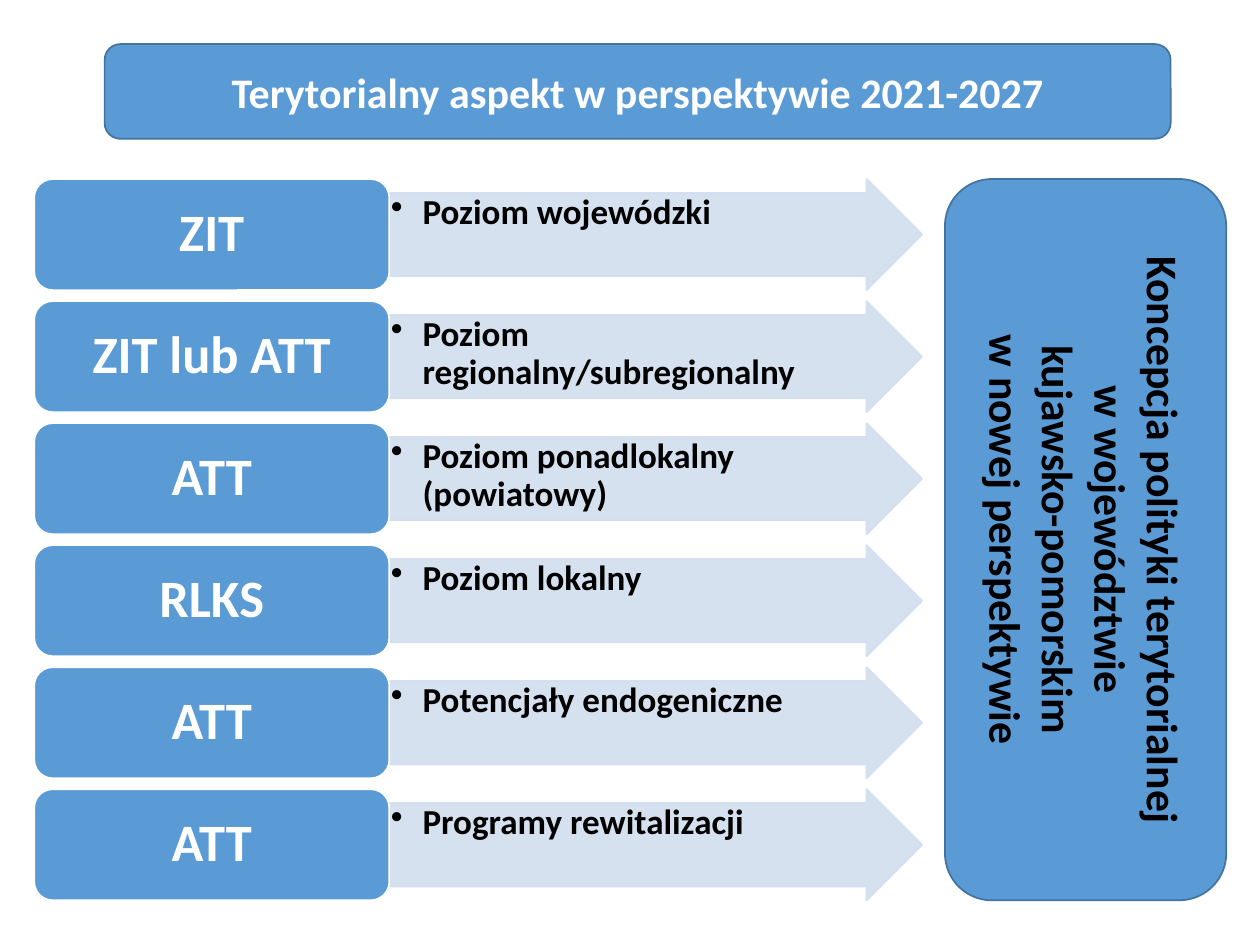
from lxml.etree import SubElement
from pptx import Presentation
from pptx.dml.color import RGBColor
from pptx.enum.shapes import MSO_SHAPE
from pptx.enum.text import MSO_ANCHOR, PP_ALIGN
from pptx.oxml.ns import qn
from pptx.util import Cm, Pt

TITLE = "Terytorialny aspekt w perspektywie 2021-2027"
LEVELS = [
    ("ZIT", "Poziom wojewódzki"),
    ("ZIT lub ATT", "Poziom regionalny/subregionalny"),
    ("ATT", "Poziom ponadlokalny (powiatowy)"),
    ("RLKS", "Poziom lokalny"),
    ("ATT", "Potencjały endogeniczne"),
    ("ATT", "Programy rewitalizacji"),
]
CONCEPT_LINES = [
    "Koncepcja polityki terytorialnej",
    "w województwie",
    "kujawsko-pomorskim",
    "w nowej perspektywie",
]

BLUE = RGBColor(0x5B, 0x9B, 0xD5)
DARK_BLUE = RGBColor(0x43, 0x73, 0x9E)
PALE_BLUE = RGBColor(0xD2, 0xDE, 0xEF)
WHITE = RGBColor(0xFF, 0xFF, 0xFF)
BLACK = RGBColor(0x00, 0x00, 0x00)

# Centimetres
ROWS_TOP, ROW_PITCH, ROW_HEIGHT = 3.61, 2.46, 2.24
LABEL_LEFT, LABEL_WIDTH = 0.69, 7.16
ARROW_LEFT, ARROW_WIDTH = LABEL_LEFT + LABEL_WIDTH, 10.74
CONCEPT_HEIGHT = ROW_PITCH * (len(LEVELS) - 1) + ROW_HEIGHT


def add_block(slide, preset, box, fill, outline):
    block = slide.shapes.add_shape(preset, *(Cm(length) for length in box))
    block.shadow.inherit = False
    block.fill.solid()
    block.fill.fore_color.rgb = fill
    block.line.color.rgb = outline
    block.line.width = Pt(1)
    return block


def write(block, text, size, color=WHITE, align=PP_ALIGN.CENTER,
          anchor=MSO_ANCHOR.MIDDLE, insets=(0.25, 0.13, 0.25, 0.13),
          spacing=None, bullet=False, vertical=False):
    """Fill the block with one bold paragraph; insets are left, top, right, bottom."""
    frame = block.text_frame
    frame.word_wrap = True
    frame.vertical_anchor = anchor
    (frame.margin_left, frame.margin_top,
     frame.margin_right, frame.margin_bottom) = (Cm(inset) for inset in insets)
    if vertical:
        frame._txBody.bodyPr.set("vert", "vert")
    frame.text = text
    paragraph = frame.paragraphs[0]
    if bullet:
        properties = paragraph._p.get_or_add_pPr()
        properties.set("marL", str(Cm(0.64)))
        properties.set("indent", str(Cm(-0.64)))
        SubElement(properties, qn("a:buChar")).set("char", "•")
    paragraph.alignment = align
    paragraph.line_spacing = spacing
    for run in paragraph.runs:
        run.font.name = "Calibri"
        run.font.size = Pt(size)
        run.font.bold = True
        run.font.color.rgb = color


def soften(block, percent):
    """Set the opacity of the block's fill and outline."""
    for color in block._element.spPr.iter(qn("a:srgbClr")):
        SubElement(color, qn("a:alpha")).set("val", str(percent * 1000))


def add_level(slide, row, label, level):
    top = ROWS_TOP + row * ROW_PITCH
    arrow = add_block(slide, MSO_SHAPE.RIGHT_ARROW,
                      (ARROW_LEFT, top, ARROW_WIDTH, ROW_HEIGHT), PALE_BLUE, PALE_BLUE)
    arrow.adjustments[0] = 0.75
    soften(arrow, 90)
    write(arrow, level, 20, color=BLACK, align=PP_ALIGN.LEFT, anchor=MSO_ANCHOR.TOP,
          insets=(0.03, 0.03, 0.58, 0.03), spacing=0.9, bullet=True)
    tag = add_block(slide, MSO_SHAPE.ROUNDED_RECTANGLE,
                    (LABEL_LEFT, top, LABEL_WIDTH, ROW_HEIGHT), BLUE, WHITE)
    write(tag, label, 30, insets=(0.3, 0.15, 0.3, 0.15), spacing=0.9)


def main():
    deck = Presentation()
    deck.slide_width, deck.slide_height = Cm(25.4), Cm(19.05)
    slide = deck.slides.add_slide(deck.slide_layouts[6])

    for row, (label, level) in enumerate(LEVELS):
        add_level(slide, row, label, level)

    concept = add_block(slide, MSO_SHAPE.ROUNDED_RECTANGLE,
                        (19.05, ROWS_TOP, 5.67, CONCEPT_HEIGHT), BLUE, DARK_BLUE)
    write(concept, "\v".join(CONCEPT_LINES), 25, color=BLACK,
          insets=(0.19, 0.1, 0.19, 0.1), vertical=True)

    title = add_block(slide, MSO_SHAPE.ROUNDED_RECTANGLE,
                      (2.11, 0.89, 21.49, 1.91), BLUE, DARK_BLUE)
    write(title, TITLE, 24)

    deck.save("out.pptx")


if __name__ == "__main__":
    main()
